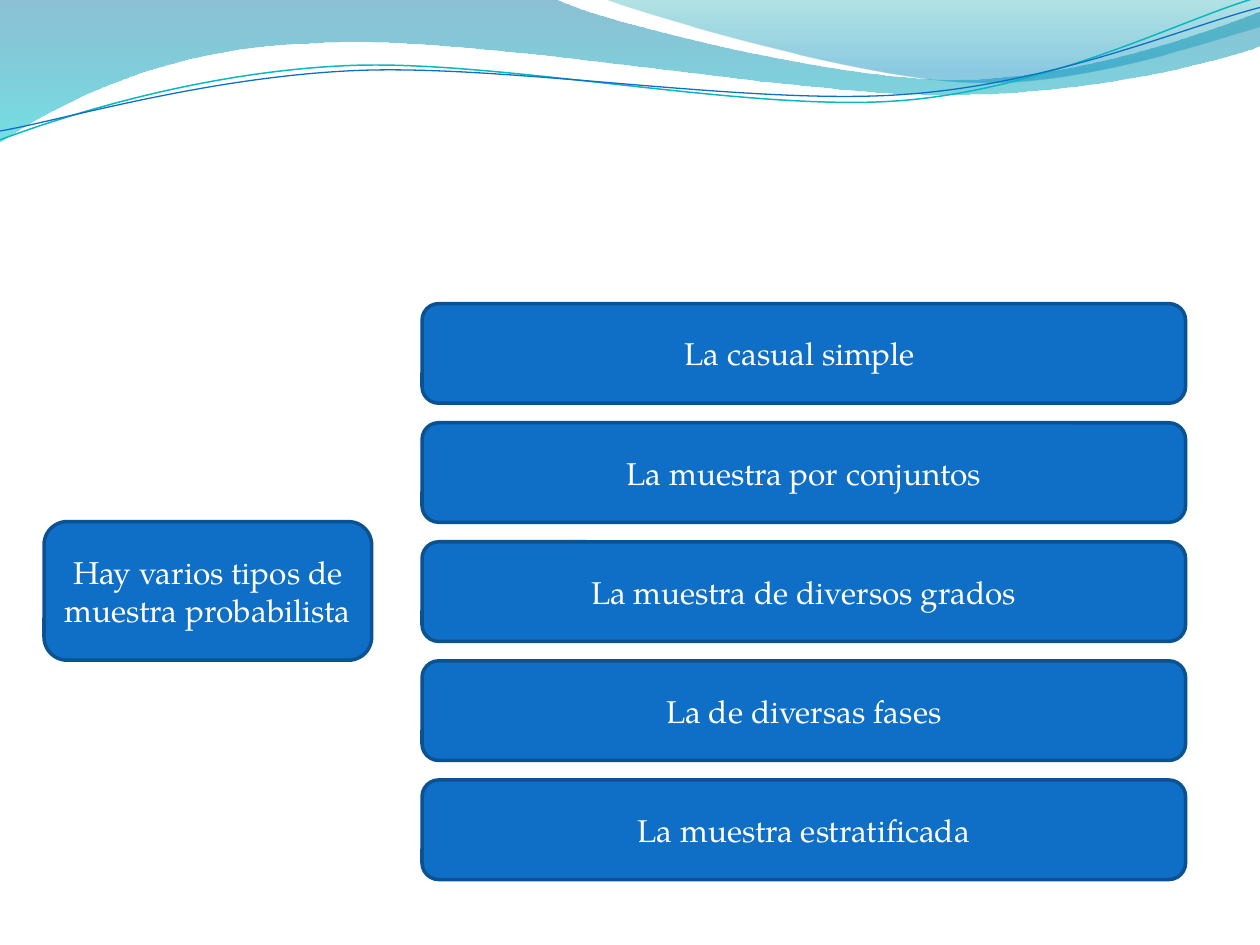
import math

import pptx
import pptx.dml.color
import pptx.enum.shapes
import pptx.enum.text
import pptx.oxml.ns
import pptx.util
import lxml.etree
from pptx.util import Inches

COLORS = {
    "box": "0F6FC6", "box_edge": "0B5292", "text": "FFFFFF", "teal_line": "0AB8BF",
    "wave_top": "0074A1", "wave_bottom": "00C6CF",
    "crest_top": "00A1A9", "crest_bottom": "008BBF",
}
FONT = "TeX Gyre Pagella"
tag = pptx.oxml.ns.qn


def rgb(name):
    return pptx.dml.color.RGBColor.from_string(COLORS[name])


def write_text(frame, text, size=18, color="text", font=FONT):
    frame.word_wrap = True
    frame.vertical_anchor = pptx.enum.text.MSO_ANCHOR.MIDDLE
    paragraph = frame.paragraphs[0]
    paragraph.alignment = pptx.enum.text.PP_ALIGN.CENTER
    run = paragraph.add_run()
    run.text = text
    run.font.size = pptx.util.Pt(size)
    run.font.name = font
    run.font.color.rgb = rgb(color)


def turn(segment, degrees, center):
    """Rotate the points of a segment clockwise about the center."""
    cos, sin = math.cos(math.radians(degrees)), math.sin(math.radians(degrees))
    turned = []
    for x, y in zip(segment[::2], segment[1::2]):
        dx, dy = x - center[0], y - center[1]
        turned += [center[0] + dx * cos - dy * sin, center[1] + dx * sin + dy * cos]
    return turned


class SlideBuilder:
    def __init__(self, slide):
        self.slide = slide
        self.edge_width = 2

    def outline(self, segments, close):
        """Draw segments: 2 numbers are a corner, 6 a cubic Bezier curve."""
        start, *points = [(Inches(x), Inches(y)) for segment in segments
                          for x, y in zip(segment[::2], segment[1::2])]
        builder = self.slide.shapes.build_freeform(*start)
        builder.add_line_segments(points, close=close)
        shape = builder.convert_to_shape()
        shape.shadow.inherit = False
        corners = iter(list(shape._element.spPr.iter(tag("a:lnTo"))))
        for segment in segments[1:]:
            steps = [next(corners) for _ in range(len(segment) // 2)]
            if len(steps) == 3:
                bezier = lxml.etree.Element(tag("a:cubicBezTo"))
                steps[0].addprevious(bezier)
                for step in steps:
                    bezier.append(step[0])
                    step.getparent().remove(step)
        return shape

    def wave(self, segments, stops):
        """Draw a filled wave; stops are (position, colour, opacity in percent)."""
        shape = self.outline(segments, close=True)
        shape.line.fill.background()
        shape.fill.gradient()
        shape.fill.gradient_angle = 270
        for stop, (position, color, _) in zip(shape.fill.gradient_stops, stops):
            stop.position = position
            stop.color.rgb = rgb(color)
        for element, (_, _, opacity) in zip(shape._element.spPr.iter(tag("a:srgbClr")), stops):
            lxml.etree.SubElement(element, tag("a:alpha"), val=str(opacity * 1000))

    def curve(self, segments, color, width, center, tilt=2.7):
        """Draw an open curve as a shape tilted counter-clockwise about its center."""
        level = [turn(segment, tilt, center) for segment in segments]
        shape = self.outline(level, close=False)
        shape.rotation = 360 - tilt
        shape.fill.background()
        shape.line.color.rgb = rgb(color)
        shape.line.width = pptx.util.Pt(width)

    def box(self, text, left, top, width, height):
        shape = self.slide.shapes.add_shape(
            pptx.enum.shapes.MSO_SHAPE.ROUNDED_RECTANGLE,
            Inches(left), Inches(top), Inches(width), Inches(height))
        shape.shadow.inherit = False
        shape.fill.solid()
        shape.fill.fore_color.rgb = rgb("box")
        shape.line.color.rgb = rgb("box_edge")
        shape.line.width = pptx.util.Pt(self.edge_width)
        write_text(shape.text_frame, text)


def main():
    deck = pptx.Presentation()
    deck.slide_width, deck.slide_height = Inches(10), Inches(7.5)
    page = SlideBuilder(deck.slides.add_slide(deck.slide_layouts[6]))

    page.wave(
        [(0, 0), (4.4, -0.01), (4.76, 0.17, 6.64, 0.63, 7.58, 0.63),
         (8.53, 0.63, 9.58, 0.26, 10, 0.09), (10.01, 0.36),
         (9.83, 0.44, 8.7, 0.76, 7.46, 0.75), (6.22, 0.75, 3.82, 0.28, 2.57, 0.34),
         (1.29, 0.36, 0.46, 0.83, -0.01, 1.13), (0, 0)],
        [(0, "wave_top", 45), (1, "wave_bottom", 55)])
    page.wave(
        [(4.79, -0.01), (5.09, 0.11, 6.82, 0.62, 7.69, 0.65),
         (8.56, 0.69, 9.61, 0.32, 10, 0.21), (10, 0), (4.79, -0.01)],
        [(0, "crest_top", 30), (0.8, "crest_bottom", 45)])
    page.curve(
        [(0, 1.11), (0.48, 0.93, 1.58, 0.57, 2.77, 0.52),
         (3.95, 0.47, 5.93, 0.89, 7.13, 0.8), (8.33, 0.71, 9.38, 0.15, 9.98, -0.02)],
        "teal_line", 0.85, center=(4.99, 0.58))
    page.curve(
        [(0, 1.04), (0.47, 0.96, 1.64, 0.61, 2.83, 0.56),
         (4.03, 0.51, 5.97, 0.84, 7.17, 0.75), (8.36, 0.67, 9.41, 0.21, 10, 0.06)],
        "box", 0.75, center=(5, 0.59))

    page.box("Hay varios tipos de muestra probabilista", 0.35, 4.14, 2.6, 1.1)
    sample_types = [
        "La casual simple ", "La muestra por conjuntos", "La muestra de diversos grados",
        "La de diversas fases", "La muestra estratificada",
    ]
    first_top, last_top = 2.41, 6.19
    pitch = (last_top - first_top) / (len(sample_types) - 1)
    for row, sample_type in enumerate(sample_types):
        page.box(sample_type, 3.35, first_top + row * pitch, 6.06, 0.79)

    deck.save("out.pptx")


if __name__ == "__main__":
    main()
